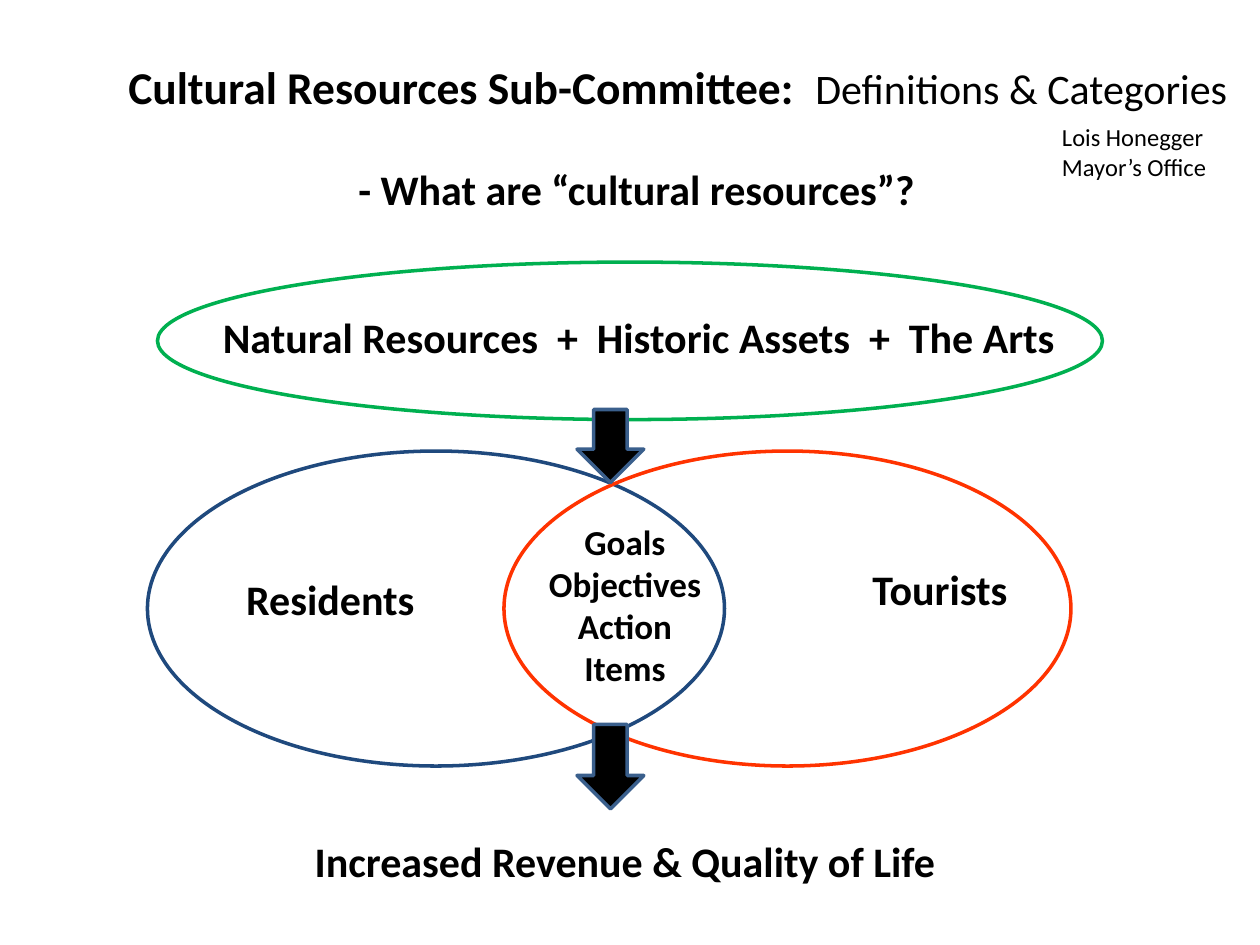
from pptx import Presentation
from pptx.dml.color import RGBColor
from pptx.enum.shapes import MSO_SHAPE as Shape
from pptx.enum.text import MSO_AUTO_SIZE as AutoSize, PP_ALIGN as Align
from pptx.util import Inches, Pt

FONT = "Calibri"
BLACK = "000000"

ELLIPSES = [
    ((1.25, 2.08, 7.5, 1.25), "00B050"),
    ((1.17, 3.58, 4.58, 2.5), "1F497D"),
    ((4, 3.58, 4.5, 2.5), "FF3300"),
]
ARROWS = [(4.58, 3.25, 0.53, 0.58), (4.58, 5.75, 0.53, 0.67)]
ARROW_LINE = "3A5F8C"

TEXTS = [
    ((0.92, 0.42, 9.08, 0.54), Align.LEFT,
     [[("Cultural Resources Sub-Committee:  ", 26, True), ("Definitions & Categories", 24, False)]]),
    ((8.33, 0.92, 1.42, 0.57), Align.LEFT,
     [[("Lois Honegger", 14, False)], [("Mayor’s Office", 14, False)]]),
    ((2.67, 1.25, 5.17, 0.5), Align.LEFT, [[(" - What are “cultural resources”?", 24, True)]]),
    ((1.67, 2.42, 6.92, 0.84), Align.LEFT,
     [[("Natural Resources  +  Historic Assets  +  The Arts", 24, True)]]),
    ((1.67, 4.5, 1.83, 0.5), Align.CENTER, [[(" Residents", 24, True)]]),
    ((6.67, 4.42, 1.58, 0.5), Align.CENTER, [[("Tourists", 24, True)]]),
    ((4.17, 4.08, 1.58, 1.45), Align.CENTER,
     [[(line, 20, True)] for line in ("Goals", "Objectives", "Action Items")]),
    ((2.17, 6.58, 5.58, 0.5), Align.CENTER, [[("Increased Revenue & Quality of Life", 24, True)]]),
]


def color(value):
    return RGBColor.from_string(value)


def add_outline(slide, kind, box, line, fill=None):
    shape = slide.shapes.add_shape(kind, *map(Inches, box))
    shape.shadow.inherit = False
    if fill:
        shape.fill.solid()
        shape.fill.fore_color.rgb = color(fill)
    else:
        shape.fill.background()
    shape.line.color.rgb = color(line)
    shape.line.width = Pt(2)


def add_text(slide, box, alignment, paragraphs):
    frame = slide.shapes.add_textbox(*map(Inches, box)).text_frame
    frame.word_wrap = True
    frame.auto_size = AutoSize.SHAPE_TO_FIT_TEXT
    for index, runs in enumerate(paragraphs):
        paragraph = frame.add_paragraph() if index else frame.paragraphs[0]
        paragraph.alignment = alignment
        for text, size, bold in runs:
            run = paragraph.add_run()
            run.text = text
            run.font.name = FONT
            run.font.size = Pt(size)
            run.font.bold = bold
            run.font.color.rgb = color(BLACK)


def main():
    presentation = Presentation()
    presentation.slide_width = Inches(10)
    presentation.slide_height = Inches(7.5)
    slide = presentation.slides.add_slide(presentation.slide_layouts[6])
    for box, line in ELLIPSES:
        add_outline(slide, Shape.OVAL, box, line)
    for box in ARROWS:
        add_outline(slide, Shape.DOWN_ARROW, box, ARROW_LINE, BLACK)
    for box, alignment, paragraphs in TEXTS:
        add_text(slide, box, alignment, paragraphs)
    presentation.save("out.pptx")


if __name__ == "__main__":
    main()
